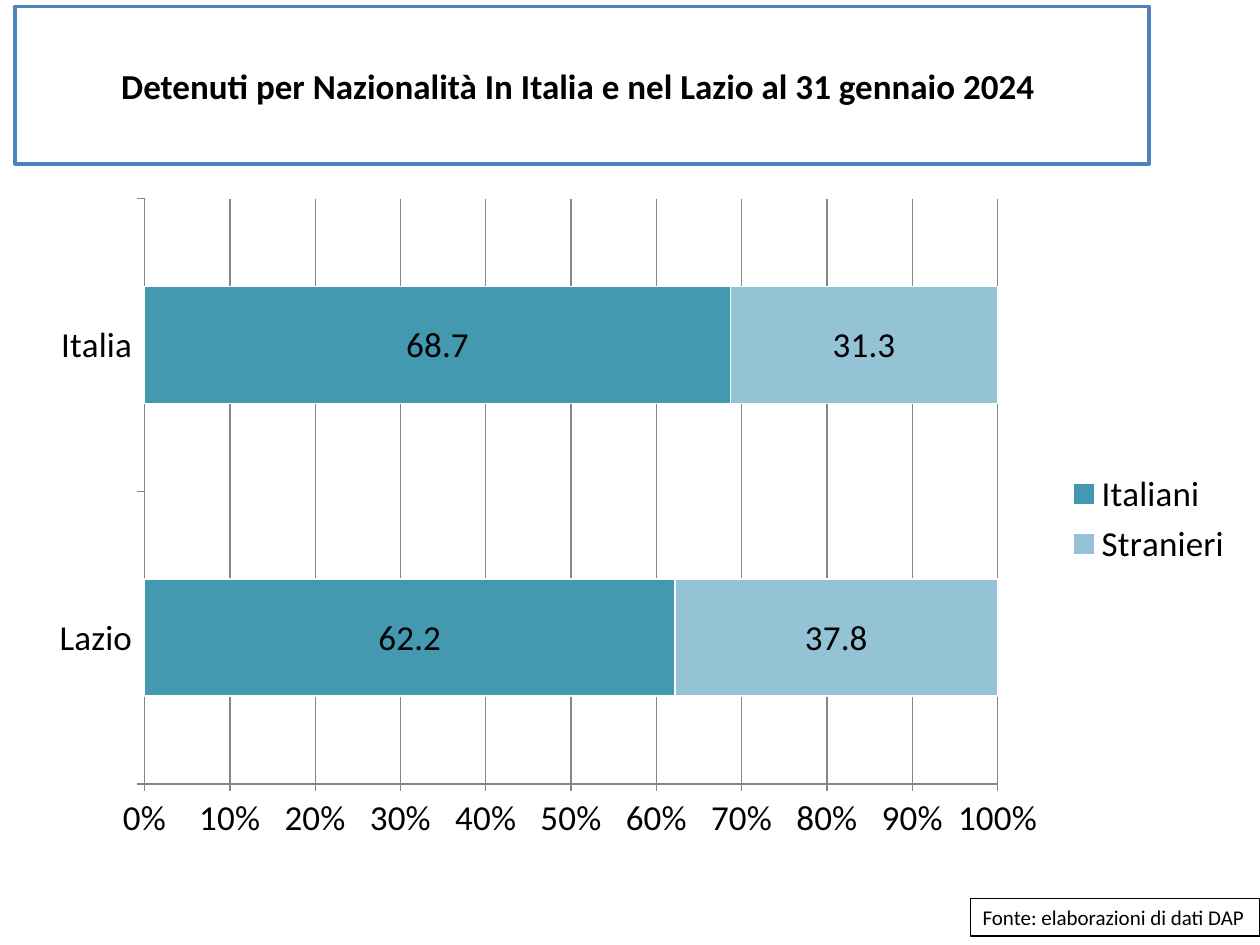
from pptx import Presentation
from pptx.chart.data import CategoryChartData as ChartData
from pptx.dml.color import RGBColor as RGB
from pptx.enum.chart import XL_CHART_TYPE as Kind, XL_LABEL_POSITION as Spot
from pptx.enum.chart import XL_LEGEND_POSITION as Side, XL_TICK_MARK as Tick
from pptx.enum.text import MSO_ANCHOR as Anchor, PP_ALIGN as Align
from pptx.util import Inches, Pt

COLORS = {"text": "000000", "back": "FFFFFF", "frame": "4F81BD", "grid": "868686",
          "Italiani": "4299B0", "Stranieri": "93C3D5"}


def color(name):
    return RGB.from_string(COLORS[name])


def style(font, size, bold=False):
    font.name = "Calibri"
    font.size = Pt(size)
    font.bold = bold
    font.color.rgb = color("text")


deck = Presentation()
deck.slide_width = Inches(10)
deck.slide_height = Inches(7.5)
slide = deck.slides.add_slide(deck.slide_layouts[5])

title = slide.shapes.title
title.left, title.top = Inches(0.12), Inches(0.05)
title.width, title.height = Inches(9), Inches(1.25)
title.text_frame.text = "Detenuti per Nazionalità In Italia e nel Lazio al 31 gennaio 2024 "
title.text_frame.vertical_anchor = Anchor.MIDDLE

source = slide.shapes.add_textbox(Inches(7.7), Inches(7.13), Inches(2.3), Inches(0.3))
source.text_frame.text = "Fonte: elaborazioni di dati DAP"
source.text_frame.word_wrap = False

for box, line, width, size, bold, align in [
    (title, "frame", 2, 20, True, Align.CENTER),
    (source, "text", 0.75, 12, False, Align.LEFT),
]:
    box.fill.solid()
    box.fill.fore_color.rgb = color("back")
    box.line.color.rgb = color(line)
    box.line.width = Pt(width)
    para = box.text_frame.paragraphs[0]
    para.alignment = align
    style(para.runs[0].font, size, bold)

data = ChartData(number_format="0.0")
data.categories = ["Lazio", "Italia"]
data.add_series("Italiani", [62.2, 68.7])
data.add_series("Stranieri", [37.8, 31.3])
chart = slide.shapes.add_chart(Kind.BAR_STACKED_100, Inches(0.28), Inches(1.47),
                               Inches(9.61), Inches(5.3), data).chart
style(chart.font, 20)
chart.has_title = False
chart.has_legend = True
chart.legend.position = Side.RIGHT
chart.legend.include_in_layout = False

plot = chart.plots[0]
plot.gap_width = 150
plot.overlap = 100
plot.vary_by_categories = False
for series in plot.series:
    series.format.fill.solid()
    series.format.fill.fore_color.rgb = color(series.name)
    series.format.line.color.rgb = color("back")
    series.format.line.width = Pt(0.75)
    labels = series.data_labels
    labels.show_value = True
    labels.position = Spot.CENTER
    labels.number_format = "0.0"
    labels.number_format_is_linked = False
    style(labels.font, 20)

values = chart.value_axis
values.minimum_scale = 0
values.maximum_scale = 1
values.major_unit = 0.1
values.has_major_gridlines = True
values.major_gridlines.format.line.color.rgb = color("grid")
values.tick_labels.number_format = "0%"
values.tick_labels.number_format_is_linked = False
for axis in (values, chart.category_axis):
    axis.major_tick_mark = Tick.OUTSIDE
    axis.format.line.color.rgb = color("grid")
    style(axis.tick_labels.font, 20)

deck.save("out.pptx")
